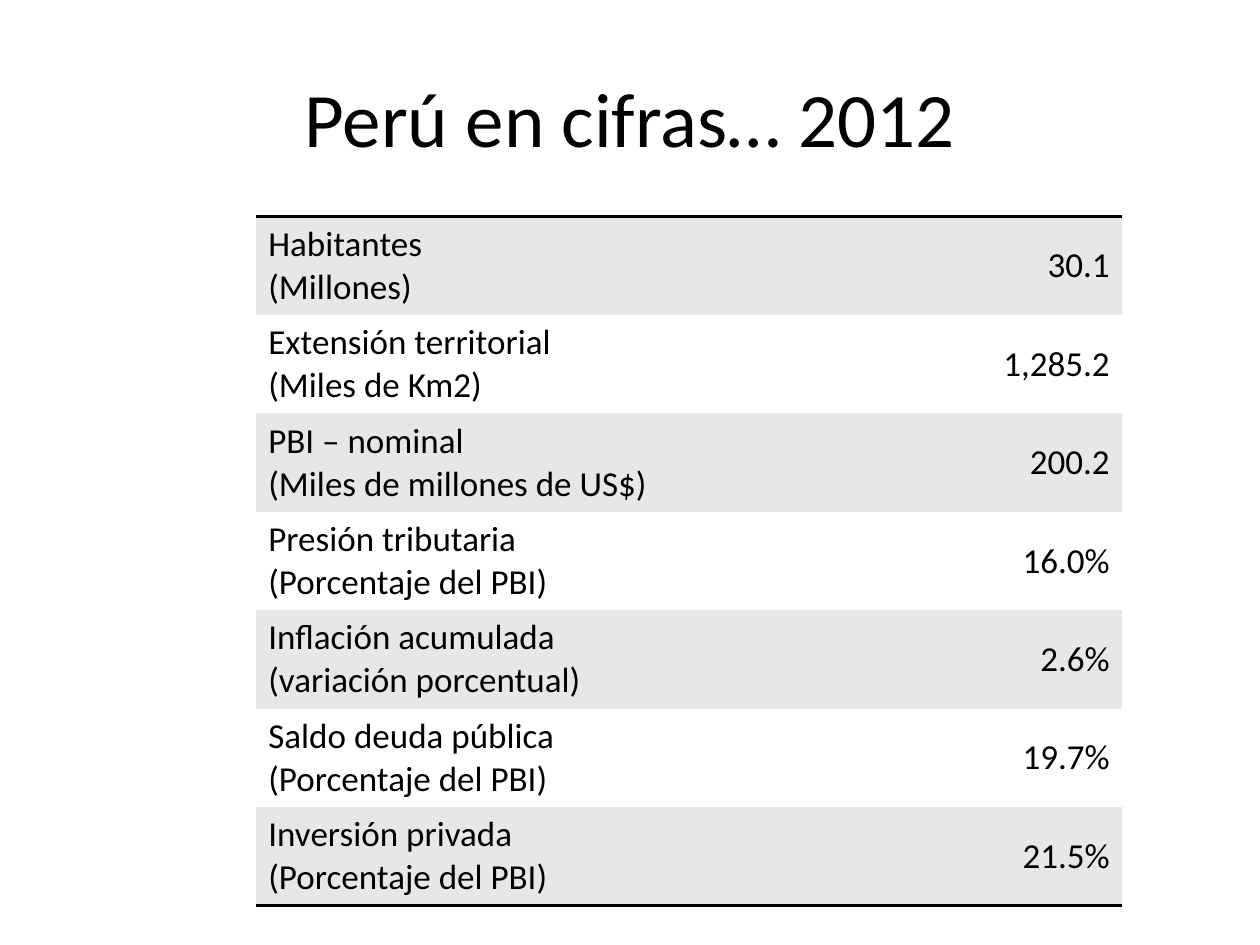
from lxml import etree
from pptx import Presentation, util as u
from pptx.dml.color import RGBColor
from pptx.enum import text
from pptx.oxml.ns import qn

FIGURES = [
    ("Habitantes", "(Millones)", "30.1"),
    ("Extensión territorial", "(Miles de Km2)", "1,285.2"),
    ("PBI – nominal", "(Miles de millones de US$)", "200.2"),
    ("Presión tributaria", "(Porcentaje del PBI)", "16.0%"),
    ("Inflación acumulada", "(variación porcentual)", "2.6%"),
    ("Saldo deuda pública", "(Porcentaje del PBI)", "19.7%"),
    ("Inversión privada", "(Porcentaje del PBI)", "21.5%"),
]
PLAIN_STYLE = "{2D5ABB26-0587-4C30-8999-92F81FD0307C}"


def color(value):
    return RGBColor.from_string(value)


class FiguresSlide:
    font, ink = "Calibri", "000000"
    bands = ("E7E7E7", "FFFFFF")
    title_size, body_size = 44, 20

    def __init__(self, deck):
        self.slide = deck.slides.add_slide(deck.slide_layouts[5])
        self.width, self.height = deck.slide_width, deck.slide_height

    def box(self, left, top, width, height):
        """Turn shares of the slide into lengths."""
        return (int(left * self.width), int(top * self.height),
                int(width * self.width), int(height * self.height))

    def set_text(self, frame, words, size, align):
        frame.text = words
        for paragraph in frame.paragraphs:
            paragraph.alignment = align
            for run in paragraph.runs:
                run.font.name, run.font.size = self.font, u.Pt(size)
                run.font.color.rgb = color(self.ink)

    def title(self, words, *shares):
        heading = self.slide.shapes.title
        heading.left, heading.top, heading.width, heading.height = self.box(*shares)
        heading.text_frame.vertical_anchor = text.MSO_ANCHOR.MIDDLE
        self.set_text(heading.text_frame, words, self.title_size, text.PP_ALIGN.CENTER)

    def rule(self, cell, side):
        """Draw a 2 pt line on one side of a cell; borders precede the fill."""
        line = etree.Element(qn(f"a:{side}"), w=str(u.Pt(2)))
        fill = etree.SubElement(line, qn("a:solidFill"))
        etree.SubElement(fill, qn("a:srgbClr"), val=self.ink)
        cell._tc.get_or_add_tcPr().insert(0, line)

    def table(self, figures, label_share, *shares):
        frame = self.slide.shapes.add_table(len(figures), 2, *self.box(*shares))
        table = frame.table
        table.first_row = table.horz_banding = False
        table._tbl.tblPr.find(qn("a:tableStyleId")).text = PLAIN_STYLE
        label_width = int(frame.width * label_share)
        table.columns[0].width = label_width
        table.columns[1].width = frame.width - label_width

        # Labels with their units on the left, values on the right
        for row, (name, unit, amount) in enumerate(figures):
            label, value = table.cell(row, 0), table.cell(row, 1)
            self.set_text(label.text_frame, f"{name}\n{unit}", self.body_size,
                          text.PP_ALIGN.LEFT)
            self.set_text(value.text_frame, amount, self.body_size,
                          text.PP_ALIGN.RIGHT)
            value.vertical_anchor = text.MSO_ANCHOR.MIDDLE
            for cell in (label, value):
                cell.fill.solid()
                cell.fill.fore_color.rgb = color(self.bands[row % 2])

        # Rules above and below the table
        for column in range(2):
            self.rule(table.cell(0, column), "lnT")
            self.rule(table.cell(len(figures) - 1, column), "lnB")


def main():
    deck = Presentation()
    deck.slide_width, deck.slide_height = u.Inches(10), u.Inches(7.5)
    peru = FiguresSlide(deck)
    peru.title("Perú en cifras… 2012", 0.05, 0.04, 0.9, 1 / 6)
    peru.table(FIGURES, 0.69, 0.203, 1.72 / 7.5, 0.578, 5.37 / 7.5)
    deck.save("out.pptx")


if __name__ == "__main__":
    main()
